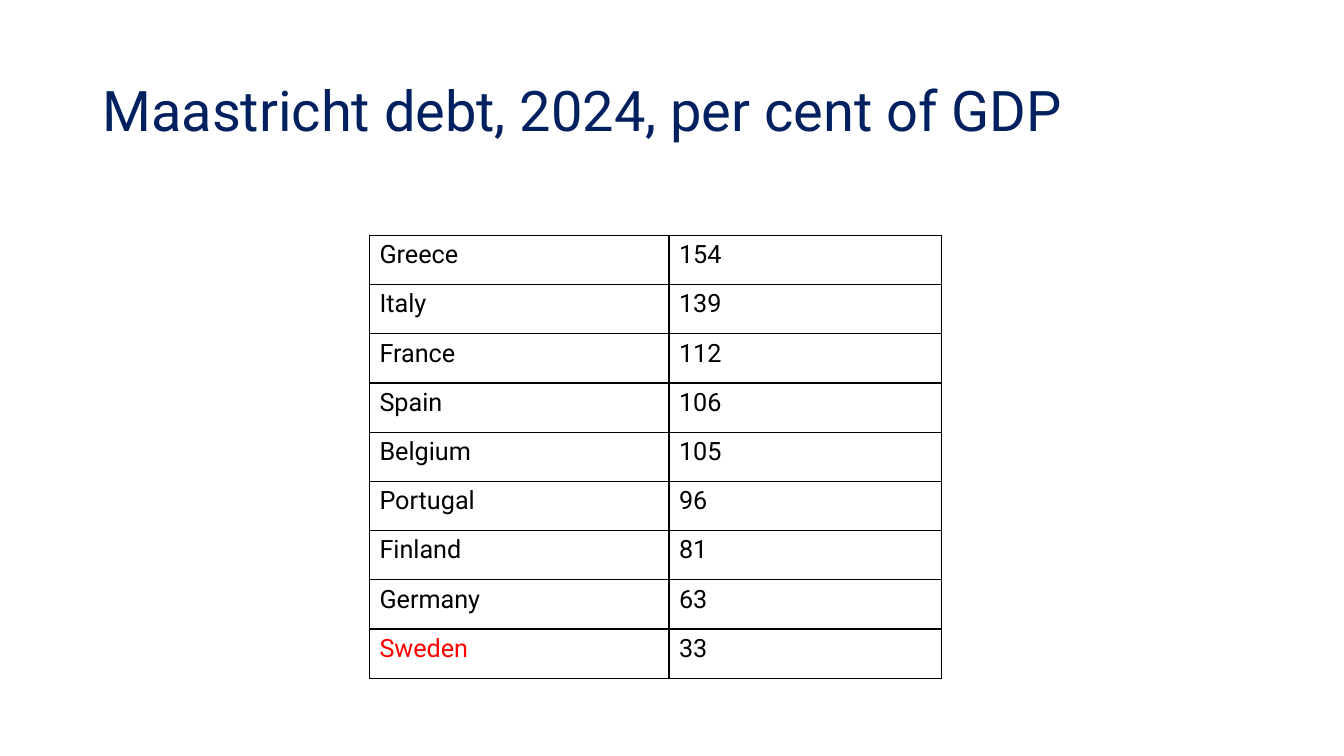
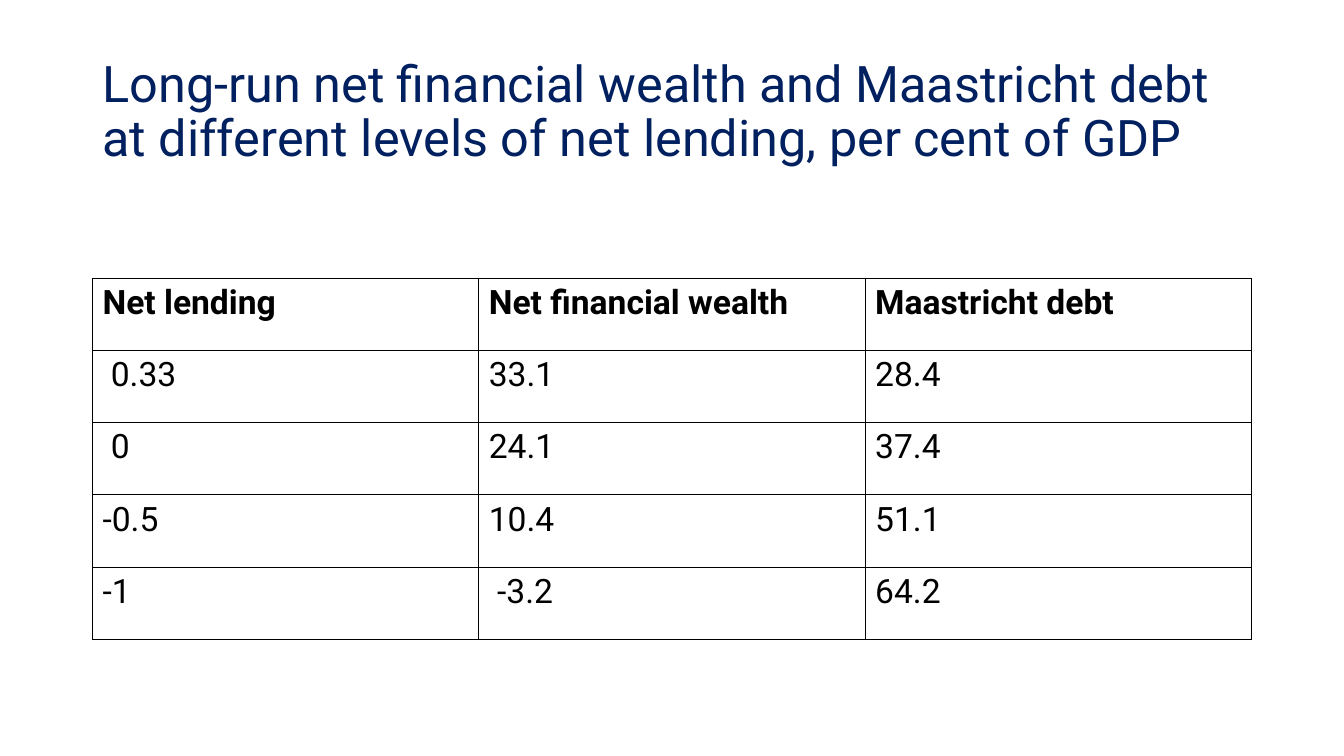
from lxml import etree
from pptx import Presentation
from pptx.dml.color import RGBColor
from pptx.enum import text
from pptx.oxml import ns
from pptx.util import Cm, Pt

NAVY = RGBColor(0x00, 0x20, 0x60)
BLACK = RGBColor(0x00, 0x00, 0x00)
RED = RGBColor(0xFF, 0x00, 0x00)
FONT = "Roboto"
MARGIN, CONTENT_WIDTH = 2.33, 29.21


def style_font(font, **values):
    color = values.pop("color")
    for name, value in {"name": FONT, **values}.items():
        setattr(font, name, value)
    font.color.rgb = color


def add_borders(cell):
    tc_pr = cell._tc.get_or_add_tcPr()
    for i, side in enumerate(("lnL", "lnR", "lnT", "lnB")):
        ln = etree.Element(ns.qn(f"a:{side}"), w=str(Pt(1)))
        fill = etree.SubElement(ln, ns.qn("a:solidFill"))
        etree.SubElement(fill, ns.qn("a:srgbClr"), val=str(BLACK))
        tc_pr.insert(i, ln)


slides = [
    {
        "title": "Maastricht debt, 2024, per cent of GDP",
        "title_size": 40,
        "left": 9.31, "top": 5.93, "cols": [7.55, 6.86], "row_height": 1.24,
        "size": 18, "header": False,
        "rows": [
            ("Greece", "154"),
            ("Italy", "139"),
            ("France", "112"),
            ("Spain", "106"),
            ("Belgium", "105"),
            ("Portugal", "96"),
            ("Finland", "81"),
            ("Germany", "63"),
            ("Sweden", "33"),
        ],
    },
    {
        "title": "Long-run net financial wealth and Maastricht debt "
                 "at different levels of net lending, per cent of GDP",
        "title_size": 36,
        "left": MARGIN, "top": 7.01, "cols": [CONTENT_WIDTH / 3] * 3, "row_height": 1.82,
        "size": 24, "header": True,
        "rows": [
            ("Net lending", "Net financial wealth", "Maastricht debt"),
            (" 0.33", "33.1", "28.4"),
            (" 0", "24.1", "37.4"),
            ("-0.5", "10.4", "51.1"),
            ("-1", " -3.2", "64.2"),
        ],
    },
]

prs = Presentation()
prs.slide_width, prs.slide_height = Cm(33.87), Cm(19.05)

for data in slides:
    s = prs.slides.add_slide(prs.slide_layouts[5])
    title = s.shapes.title
    title.left, title.top = Cm(MARGIN), Cm(1.01)
    title.width, title.height = Cm(CONTENT_WIDTH), Cm(3.68)
    tf = title.text_frame
    tf.text = data["title"]
    tf.auto_size = text.MSO_AUTO_SIZE.NONE
    tf.vertical_anchor = text.MSO_ANCHOR.MIDDLE
    p = tf.paragraphs[0]
    p.alignment = text.PP_ALIGN.LEFT
    p.line_spacing = 0.9
    style_font(p.runs[0].font, size=Pt(data["title_size"]), color=NAVY)

    rows, cols = data["rows"], data["cols"]
    table = s.shapes.add_table(
        len(rows), len(cols), Cm(data["left"]), Cm(data["top"]),
        Cm(sum(cols)), Cm(data["row_height"] * len(rows))).table
    table.first_row = data["header"]
    table.horz_banding = False
    for column, width in zip(table.columns, cols):
        column.width = Cm(width)
    for i, values in enumerate(rows):
        table.rows[i].height = Cm(data["row_height"])
        for j, value in enumerate(values):
            cell = table.cell(i, j)
            cell.text = value
            cell.fill.background()
            add_borders(cell)
            style_font(cell.text_frame.paragraphs[0].runs[0].font,
                       size=Pt(data["size"]),
                       bold=data["header"] and i == 0,
                       color=RED if value == "Sweden" else BLACK)

prs.save("out.pptx")
